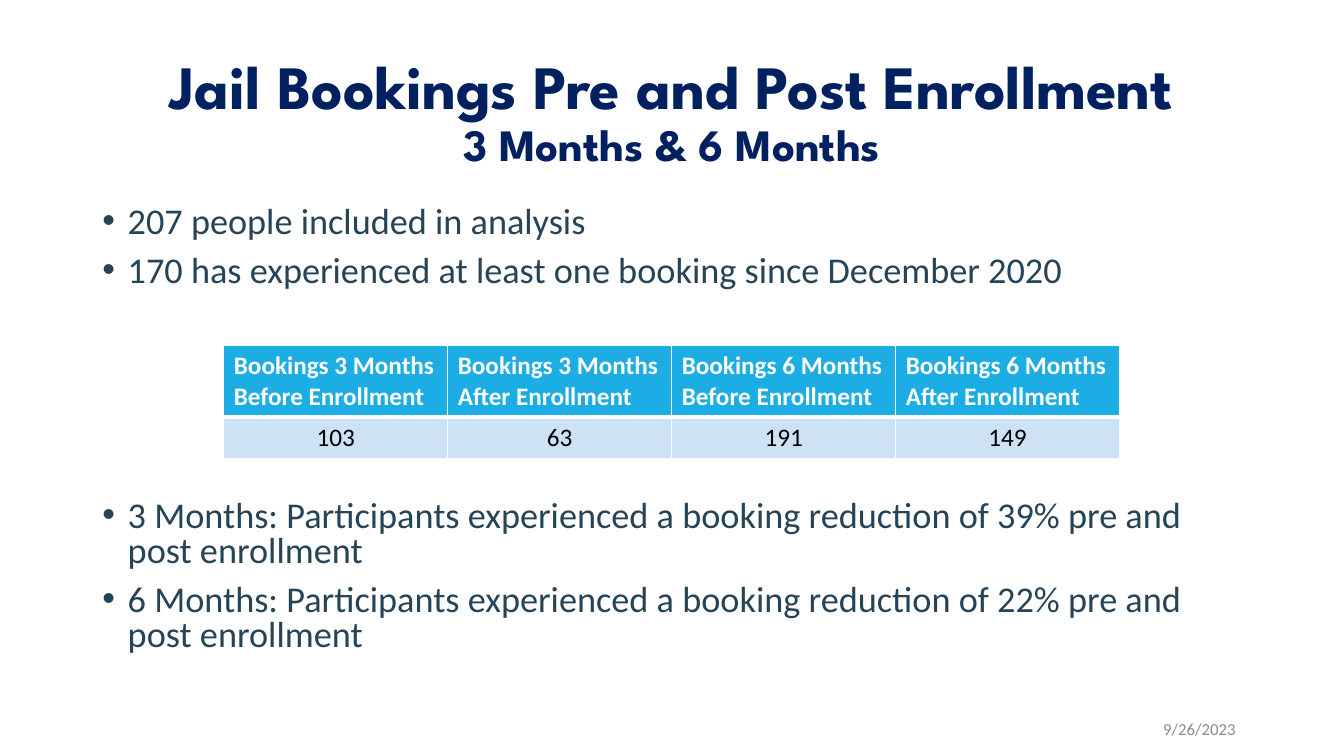
from lxml.etree import SubElement
from pptx import Presentation
from pptx.dml.color import RGBColor
from pptx.enum.text import MSO_ANCHOR as Anchor, PP_ALIGN as Align
from pptx.oxml.ns import qn
from pptx.util import Cm, Pt

COLORS = {
    "title": "002060",
    "body": "264457",
    "date": "8C8C8C",
    "header": "1CADE4",
    "values": "CDE3F5",
    "white": "FFFFFF",
    "black": "000000",
}
BOOKINGS = [
    ("Bookings 3 Months Before Enrollment", "103"),
    ("Bookings 3 Months After Enrollment", "63"),
    ("Bookings 6 Months Before Enrollment", "191"),
    ("Bookings 6 Months After Enrollment", "149"),
]
SAMPLE = [
    "207 people included in analysis",
    "170 has experienced at least one booking since December 2020",
]
FINDINGS = [
    "3 Months: Participants experienced a booking reduction of 39% pre and post enrollment",
    "6 Months: Participants experienced a booking reduction of 22% pre and post enrollment",
]


def style(target, color, **formats):
    for name, value in formats.items():
        setattr(target.font, name, value)
    target.font.color.rgb = RGBColor.from_string(COLORS[color])


def text_frame(slide, box, anchor):
    frame = slide.shapes.add_textbox(*map(Cm, box)).text_frame
    frame.word_wrap = True
    frame.vertical_anchor = anchor
    return frame


def add_title(slide, box, heading, period):
    line = text_frame(slide, box, Anchor.MIDDLE).paragraphs[0]
    line.alignment = Align.CENTER
    line.line_spacing = 0.9
    for text, size in ((heading, 44), (period, 32)):
        if line.runs:
            line.add_line_break()
        run = line.add_run()
        run.text = text
        style(run, "title", name="League Spartan", size=Pt(size), bold=True)


def add_bullets(slide, box, points):
    frame = text_frame(slide, box, Anchor.TOP)
    for index, point in enumerate(points):
        bullet = frame.add_paragraph() if index else frame.paragraphs[0]
        bullet.text = point
        bullet.line_spacing = 0.8
        bullet.space_before = Pt(10 if index else 0)
        properties = bullet._p.get_or_add_pPr()
        properties.set("marL", str(Cm(0.64)))
        properties.set("indent", str(-Cm(0.64)))
        SubElement(properties, qn("a:buFont"), typeface="Arial")
        SubElement(properties, qn("a:buChar"), char="•")
        style(bullet, "body", name="Calibri", size=Pt(25.9))


def add_borders(cell, widths):
    properties = cell._tc.get_or_add_tcPr()
    for side, width in widths.items():
        edge = SubElement(properties, qn(f"a:ln{side}"), w=str(Pt(width)))
        fill = SubElement(edge, qn("a:solidFill"))
        SubElement(fill, qn("a:srgbClr"), val=COLORS["white"])


def add_bookings_table(slide, box, bookings):
    row_heights = (1.8, 1.04)
    table = slide.shapes.add_table(2, len(bookings), *map(Cm, box)).table
    for row, height in zip(table.rows, row_heights):
        row.height = Cm(height)
    # Fill, text colour, weight, alignment, top and bottom border of each row
    row_formats = [
        ("header", "white", True, Align.LEFT, 1, 3),
        ("values", "black", False, Align.CENTER, 3, 1),
    ]
    for column, entry in enumerate(bookings):
        table.columns[column].width = Cm(box[2] / len(bookings))
        for row, (text, formats) in enumerate(zip(entry, row_formats)):
            fill, color, bold, alignment, top, bottom = formats
            cell = table.cell(row, column)
            add_borders(cell, {"L": 1, "R": 1, "T": top, "B": bottom})
            cell.fill.solid()
            cell.fill.fore_color.rgb = RGBColor.from_string(COLORS[fill])
            cell.text = text
            paragraph = cell.text_frame.paragraphs[0]
            paragraph.alignment = alignment
            style(paragraph, color, name="Calibri", size=Pt(18), bold=bold)


def add_date(slide, box, date):
    line = text_frame(slide, box, Anchor.MIDDLE).paragraphs[0]
    line.text = date
    line.alignment = Align.RIGHT
    style(line, "date", name="Calibri", size=Pt(12))


def main():
    deck = Presentation()
    deck.slide_width, deck.slide_height = Cm(33.87), Cm(19.05)
    slide = deck.slides.add_slide(deck.slide_layouts[6])
    left, width = 2.33, 29.21

    # Heading
    add_title(slide, (left, 1.02, width, 3.68),
              "Jail Bookings Pre and Post Enrollment", "3 Months & 6 Months")
    # Sample, booking counts and findings
    add_bullets(slide, (left, 5.08, width, 3), SAMPLE)
    add_bookings_table(slide, (5.64, 8.71, 22.58, 2.84), BOOKINGS)
    add_bullets(slide, (left, 12.5, width, 4.67), FINDINGS)
    # Footer
    add_date(slide, (23.77, 17.86, 7.62, 1.02), "9/26/2023")

    deck.save("out.pptx")


if __name__ == "__main__":
    main()
